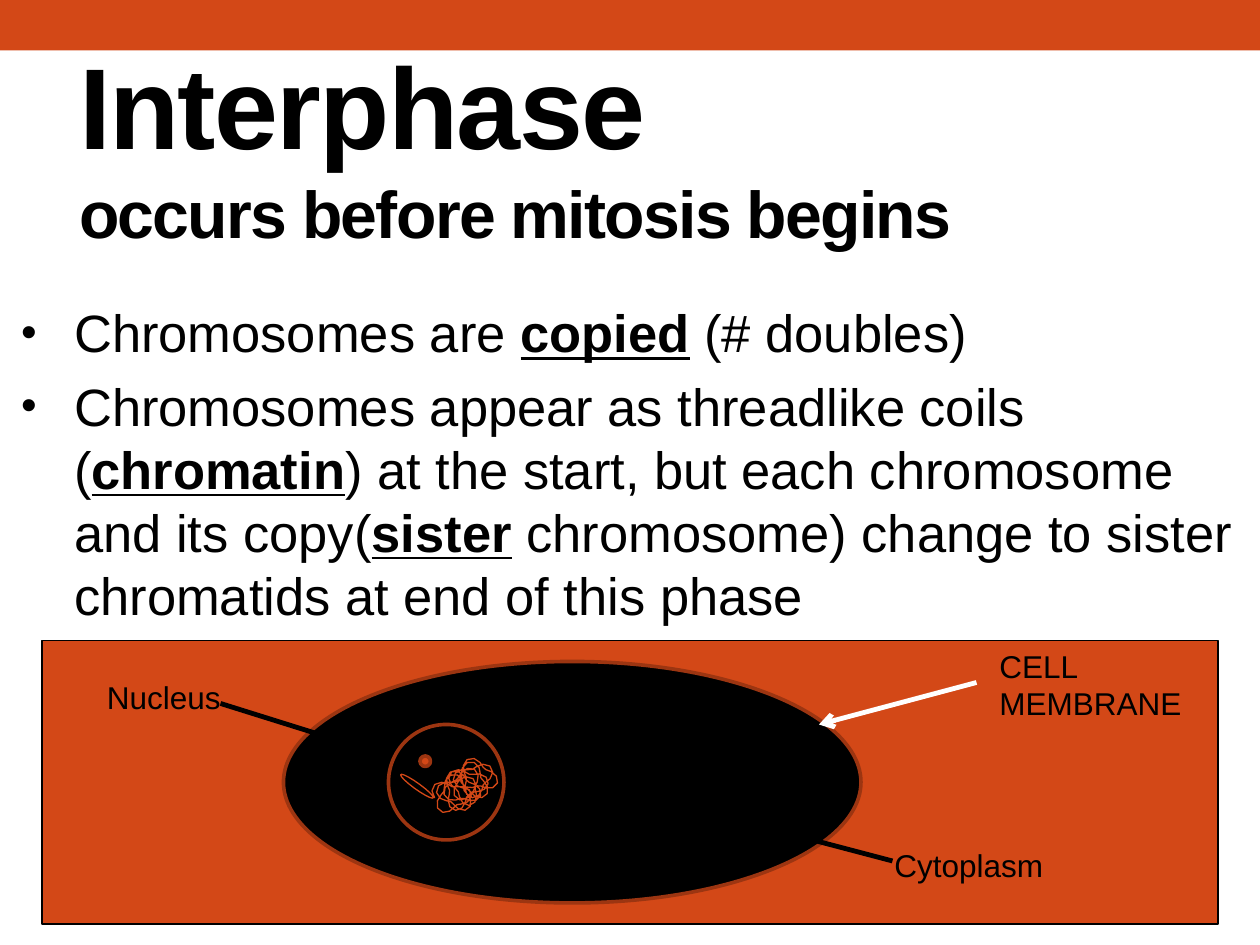
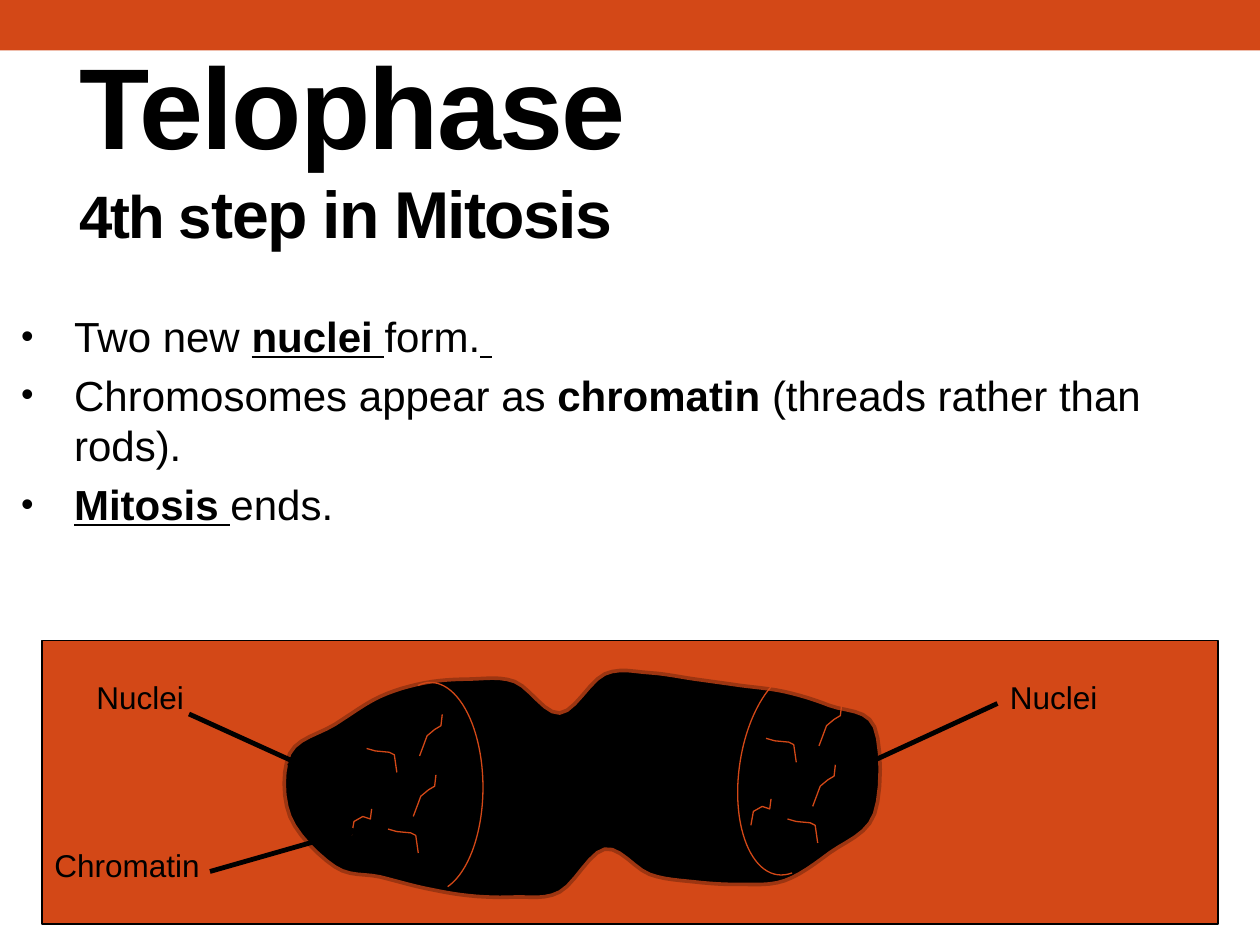
import math
import pptx
import pptx.util
import pptx.dml.color
import pptx.enum.shapes
import pptx.enum.text
import pptx.oxml

RUST = pptx.dml.color.RGBColor(0xD3, 0x48, 0x17)
BROWN = pptx.dml.color.RGBColor(0x9C, 0x35, 0x11)
BLACK = pptx.dml.color.RGBColor(0, 0, 0)
WHITE = pptx.dml.color.RGBColor(0xFF, 0xFF, 0xFF)
FONT = "Arial"
KIND = pptx.enum.shapes.MSO_SHAPE

COLS, ROWS = 120, 90
WIDE, HIGH = pptx.util.Inches(10), pptx.util.Inches(7.5)
POINT = pptx.util.Inches(0.01)
HAIR, THICK, BOLD = 0.75, 2.08, 2.75
BAND = (0, 0, COLS, 4.8)
PANEL = (4, 61, 112, 27)

TURNS, STEPS = 9, 18
LEFT, PITCH = 230, 35.7
ROOF = [598, 575, 553, 542, 539, 541, 566, 535, 534, 539, 544, 549, 560, 577]
FLOOR = [648, 688, 696, 705, 711, 712, 708, 674, 694, 700, 702, 699, 677, 646]

BEND = [(0, 0), (7, 2), (18, 3), (22, 5), (24, 19)]
HOOK = [(0, 21), (2, 10), (9, 6), (15, 8), (16, 0)]
CURL = [(0, 33), (6, 17), (12, 12), (17, 9), (18, 0)]
THREADS = [(BEND, 291, 594), (HOOK, 279, 642), (CURL, 328, 615),
           (CURL, 333, 567), (BEND, 308, 658)]
HALVES = [(0, 0), (317, -8)]


def grid(col, row):
    return round(col * WIDE / COLS), round(row * HIGH / ROWS)


def add(parent, tag, **attrs):
    parent.append(parent.makeelement(pptx.oxml.ns.qn("a:" + tag), attrs))


def paint(shape, fill, line, width):
    shape.shadow.inherit = False
    if fill is None:
        shape.fill.background()
    else:
        shape.fill.solid()
        shape.fill.fore_color.rgb = fill
    if line is None:
        shape.line.fill.background()
    else:
        shape.line.color.rgb = line
        shape.line.width = pptx.util.Pt(width)
    return shape


def draw(slide, kind, box, fill=None, line=None, width=THICK):
    shape = slide.shapes.add_shape(kind, *grid(*box[:2]), *grid(*box[2:]))
    return paint(shape, fill, line, width)


def trace(slide, points, fill=None, line=RUST, width=HAIR, shift=(0, 0)):
    spots = [((x + shift[0]) * POINT, (y + shift[1]) * POINT) for x, y in points]
    pen = slide.shapes.build_freeform(*spots[0])
    pen.add_line_segments(spots[1:], close=fill is not None)
    paint(pen.convert_to_shape(), fill, line, width)


def arc(slide, box, start, end, turn=0):
    shape = draw(slide, KIND.ARC, box, line=RUST, width=HAIR)
    shape.adjustments[0], shape.adjustments[1] = start, end
    shape.rotation = turn


def arrow(slide, tail, head, color=BLACK):
    line = slide.shapes.add_connector(
        pptx.enum.shapes.MSO_CONNECTOR.STRAIGHT, *grid(*tail), *grid(*head))
    line.line.color.rgb = color
    line.line.width = pptx.util.Pt(BOLD)
    add(line.line._get_or_add_ln(), "tailEnd", type="arrow")
    add(line._element.spPr, "effectLst")


def blend(a, b, c, d, part):
    return b + part / 2 * (c - a + part * (
        2 * a - 5 * b + 4 * c - d + part * (3 * (b - c) + d - a)))


def smooth(knots, steps=6):
    count = len(knots)
    curve = []
    for spot in range(count):
        near = [knots[(spot + move) % count] for move in (-1, 0, 1, 2)]
        xs, ys = zip(*near)
        curve += [(blend(*xs, step / steps), blend(*ys, step / steps))
                  for step in range(steps)]
    return curve


def pinched():
    def edge(rows):
        return [(LEFT + PITCH * place, row) for place, row in enumerate(rows)]
    return smooth(edge(ROOF) + edge(FLOOR)[::-1])


def tangle():
    points = []
    for step in range(STEPS + 1):
        turn = math.pi * (2 * step / STEPS - 1)
        points.append((331 - 13 * math.cos(turn),
                       624 - 9 * math.cos(turn) + 3 * math.sin(turn)))
    total = TURNS * STEPS
    for step in range(total + 1):
        drift = step / total
        turn = math.pi + math.tau * step / STEPS
        reach = 12 + 4 * math.sin(2.6 * (turn - math.pi))
        points.append((357 + 24 * drift + reach * math.cos(turn),
                       633 - 18 * drift + reach * math.sin(turn)))
    return points


def frame(slide, box, wrap=True):
    text = slide.shapes.add_textbox(*grid(*box[:2]), *grid(*box[2:])).text_frame
    text.word_wrap = wrap
    return text


def style(para, size=None):
    para.font.name = FONT
    para.font.color.rgb = BLACK
    if size:
        para.font.size = pptx.util.Pt(size)


def indent(para, left, first=0):
    props = para._p.get_or_add_pPr()
    props.set("marL", str(pptx.util.Inches(left)))
    props.set("indent", str(pptx.util.Inches(first)))
    return props


def label(slide, words, col, row, cols, wrap=False):
    para = frame(slide, (col, row, cols, 4.8), wrap).paragraphs[0]
    para.text = words
    style(para, 18)


def title(slide, name, parts):
    text = frame(slide, (0, 2, COLS, 23.3))
    text.vertical_anchor = pptx.enum.text.MSO_ANCHOR.MIDDLE
    para = text.paragraphs[0]
    indent(para, 0.53)
    style(para)
    para.font.bold = True
    for place, (words, size) in enumerate([(name, 65.7)] + parts):
        if place == 1:
            para.add_line_break()
        run = para.add_run()
        run.text = words
        run.font.size = pptx.util.Pt(size)
        run.font._element.set("spc", "-100")


def body(slide, row, size, items):
    text = frame(slide, (0, row, COLS, 33))
    for place, runs in enumerate(items):
        para = text.add_paragraph() if place else text.paragraphs[0]
        para.space_before = pptx.util.Pt(size * 0.2)
        props = indent(para, 0.49, -0.42)
        add(props, "buSzPct", val="85000")
        add(props, "buFont", typeface=FONT)
        add(props, "buChar", char="•")
        style(para, size)
        for words, marks in runs:
            run = para.add_run()
            run.text = words
            if "b" in marks:
                run.font.bold = True
            if "u" in marks:
                run.font.underline = True


def base(deck, name, parts, row, size, items):
    slide = deck.slides.add_slide(deck.slide_layouts[6])
    draw(slide, KIND.RECTANGLE, BAND, RUST)
    draw(slide, KIND.RECTANGLE, PANEL, RUST, BLACK, HAIR)
    title(slide, name, parts)
    body(slide, row, size, items)
    return slide


def inter(deck):
    parts = [("occurs before mitosis begins", 37.8)]
    slide = base(deck, "Interphase ", parts, 28, 30, [
        [("Chromosomes are ", ""), ("copied", "bu"), (" (# doubles)", "")],
        [("Chromosomes appear as threadlike coils (", ""), ("chromatin", "bu"),
         (") at the start, but each chromosome and its copy(", ""), ("sister", "bu"),
         (" chromosome) change to sister chromatids at end of this phase", "")]])
    draw(slide, KIND.OVAL, (27, 63, 55, 23), BLACK, BROWN)
    draw(slide, KIND.FLOWCHART_CONNECTOR, (37, 69, 11, 11), None, BROWN)
    trace(slide, tangle())
    draw(slide, KIND.FLOWCHART_CONNECTOR, (40, 72, 1, 1), RUST, BROWN)
    arrow(slide, (93, 65), (78, 69), WHITE)
    arrow(slide, (21, 67), (37, 72))
    arrow(slide, (85, 82), (66, 77))
    label(slide, "CELL MEMBRANE", 94, 61, 26, True)
    label(slide, "Nucleus", 9, 64, 13.3)
    label(slide, "Cytoplasm", 84, 80, 16.7)


def telo(deck):
    parts = [("4th s", 34.2), ("tep in Mitosis", 37.8)]
    slide = base(deck, "Telophase ", parts, 29, 24, [
        [("Two new ", ""), ("nuclei ", "bu"), ("form.", ""), (" ", "bu")],
        [("Chromosomes appear as ", ""), ("chromatin", "b"),
         (" (threads rather than rods).", "")],
        [("Mitosis ", "bu"), ("ends.", "")]])
    trace(slide, pinched(), BLACK, BROWN, THICK)
    arc(slide, (36, 65, 10, 20), 157.74, 48.1)
    arc(slide, (70.4, 63.6, 10.1, 19.8), 157.11, 43.64, 188.2)
    for right, down in HALVES:
        for thread, left, top in THREADS:
            trace(slide, thread, shift=(left + right, top + down))
    arrow(slide, (95, 67), (82, 73))
    arrow(slide, (18, 68), (29, 73))
    arrow(slide, (20, 83), (34, 79))
    for col in (8, 95):
        label(slide, "Nuclei", col, 64, 10.8)
    label(slide, "Chromatin", 4, 80, 17, True)


def main():
    deck = pptx.Presentation()
    deck.slide_width, deck.slide_height = WIDE, HIGH
    inter(deck)
    telo(deck)
    deck.save("out.pptx")


if __name__ == "__main__":
    main()
